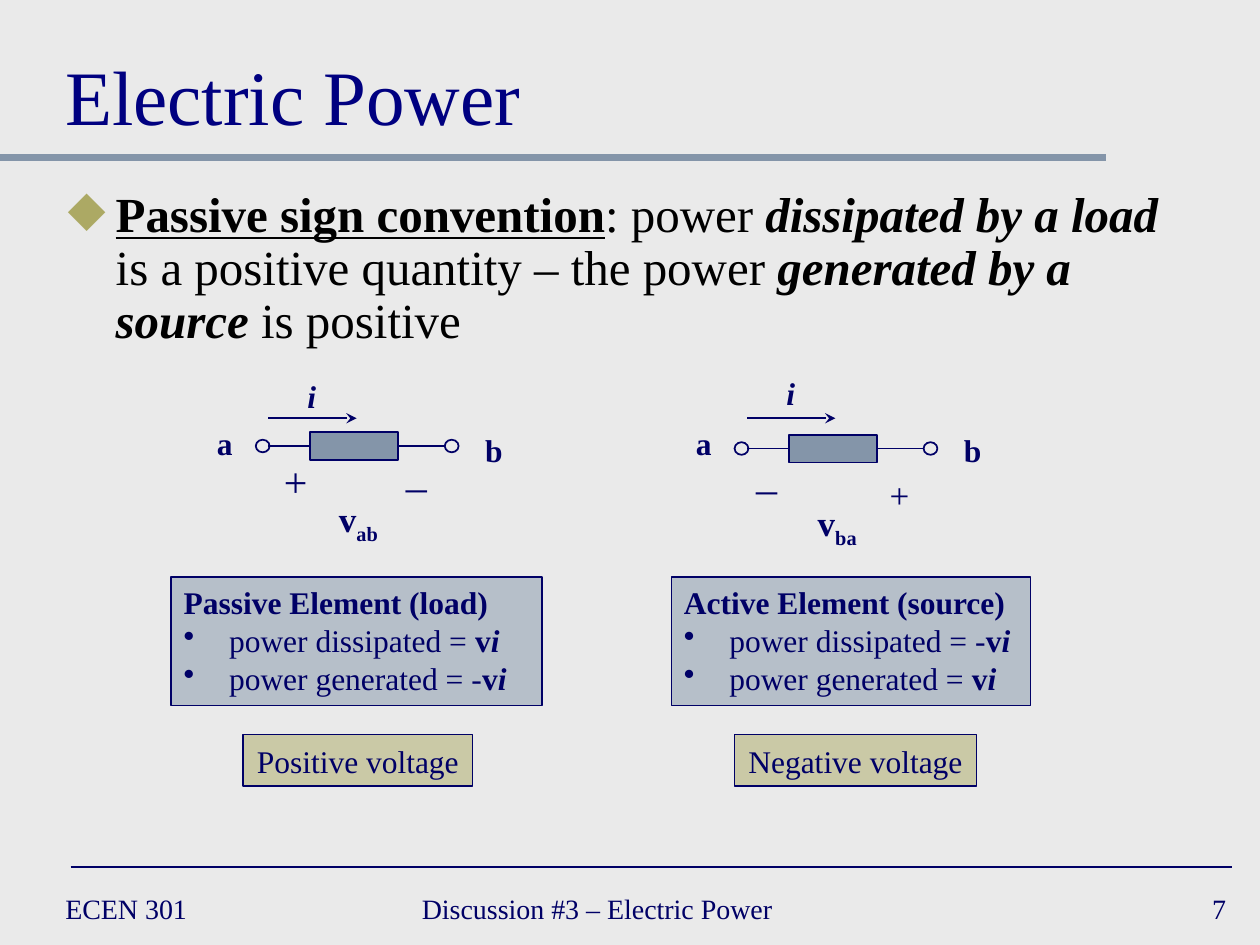
from pptx import Presentation
from pptx.dml.color import RGBColor
from pptx.enum.shapes import MSO_CONNECTOR, MSO_SHAPE
from pptx.enum.text import MSO_ANCHOR, PP_ALIGN
from pptx.oxml.ns import qn
from pptx.util import Inches, Pt
from lxml.etree import SubElement

PAPER = RGBColor(0xEA, 0xEA, 0xEA)
NAVY = RGBColor(0x00, 0x00, 0x66)
TITLE_BLUE = RGBColor(0x00, 0x00, 0x80)
BLACK = RGBColor(0x00, 0x00, 0x00)
STEEL = RGBColor(0x84, 0x95, 0xA9)
OLIVE = RGBColor(0xAC, 0xA9, 0x64)
FONT = "Times New Roman"
COLUMNS, ROWS = 100, 75
CELL = Inches(0.1)


def cells(*counts):
    """Turn counts of grid columns or rows into lengths."""
    return [round(count * CELL) for count in counts]


def add_runs(paragraph, runs, size, color):
    """Add (text, flags) runs; flags are b, i, u and s for subscript."""
    for text, flags in runs:
        run = paragraph.add_run()
        run.text = text
        font = run.font
        font.name, font.size, font.color.rgb = FONT, Pt(size), color
        font.bold = "b" in flags
        font.italic = "i" in flags
        font.underline = "u" in flags
        if "s" in flags:
            run._r.get_or_add_rPr().set("baseline", "-25000")


def add_bullet(paragraph, character, indent, color=None):
    properties = paragraph._p.get_or_add_pPr()
    properties.set("marL", str(Inches(indent)))
    properties.set("indent", str(-Inches(indent)))
    if color is not None:
        bullet_color = SubElement(properties, qn("a:buClr"))
        SubElement(bullet_color, qn("a:srgbClr")).set("val", str(color))
    SubElement(properties, qn("a:buChar")).set("char", character)


def add_text(shapes, box, runs, size, color=NAVY, align=PP_ALIGN.LEFT,
             anchor=MSO_ANCHOR.TOP, wrap=True):
    shape = shapes.add_textbox(*cells(*box))
    frame = shape.text_frame
    frame.word_wrap = wrap
    frame.vertical_anchor = anchor
    paragraph = frame.paragraphs[0]
    paragraph.alignment = align
    add_runs(paragraph, runs, size, color)
    return shape


def add_label(shapes, box, text, size=18, flags=""):
    return add_text(shapes, box, [(text, flags)], size,
                    align=PP_ALIGN.CENTER, wrap=False)


def add_line(shapes, start, end, color=NAVY, width=1, arrow=False):
    line = shapes.add_connector(MSO_CONNECTOR.STRAIGHT, *cells(*start, *end))
    line.line.color.rgb = color
    line.line.width = Pt(width)
    if arrow:
        SubElement(line.line._get_or_add_ln(), qn("a:tailEnd")).set("type", "stealth")
    SubElement(line._element.spPr, qn("a:effectLst"))


def add_outlined(shapes, kind, box, fill=None, opacity=100):
    shape = shapes.add_shape(kind, *cells(*box))
    shape.shadow.inherit = False
    if fill is None:
        shape.fill.background()
    else:
        shape.fill.solid()
        shape.fill.fore_color.rgb = fill
        if opacity < 100:
            tint = shape._element.spPr.find(".//" + qn("a:srgbClr"))
            SubElement(tint, qn("a:alpha")).set("val", str(opacity * 1000))
    shape.line.color.rgb = NAVY
    shape.line.width = Pt(1)
    return shape


def add_circuit(slide, left, wire, current_top, voltage_top, subscript):
    """Draw a two-terminal element whose left terminal starts at left."""
    shapes = slide.shapes.add_group_shape().shapes
    for terminal, inner, outer in ((0, 1, 4.3), (15, 11.3, 15)):
        add_line(shapes, (left + inner, wire), (left + outer, wire))
        add_outlined(shapes, MSO_SHAPE.OVAL, (left + terminal, wire - 0.5, 1.1, 1))
    add_outlined(shapes, MSO_SHAPE.RECTANGLE, (left + 4.3, wire - 1.1, 7, 2.2), STEEL)
    add_line(shapes, (left + 1, 33.2), (left + 8, 33.2), arrow=True)
    add_label(shapes, (left + 3.1, current_top, 2.7, 4), "i", flags="bi")
    add_label(shapes, (left - 4.1, 33.2, 3.3, 4), "a", flags="b")
    add_label(shapes, (left + 17.2, 33.7, 3.4, 4), "b", flags="b")
    add_text(shapes, (left + 4.8, voltage_top, 6.7, 4.4),
             [("v", "b"), (subscript, "bs")], 20, align=PP_ALIGN.CENTER)
    return shapes


def add_element_box(slide, left, width, heading, dissipated_sign, generated_sign):
    box = add_outlined(slide.shapes, MSO_SHAPE.RECTANGLE,
                       (left, 45.8, width, 10.2), STEEL, 50)
    frame = box.text_frame
    frame.word_wrap = True
    frame.vertical_anchor = MSO_ANCHOR.TOP
    first = frame.paragraphs[0]
    first.alignment = PP_ALIGN.LEFT
    add_runs(first, [(heading, "b")], 18, NAVY)
    for kind, sign in (("dissipated", dissipated_sign), ("generated", generated_sign)):
        paragraph = frame.add_paragraph()
        paragraph.alignment = PP_ALIGN.LEFT
        add_bullet(paragraph, "•", 0.36)
        add_runs(paragraph, [(f"power {kind} = {sign}", ""), ("v", "b"), ("i", "bi")],
                 18, NAVY)


def add_voltage_tag(slide, left, width, text):
    tag = add_outlined(slide.shapes, MSO_SHAPE.RECTANGLE,
                       (left, 58.3, width, 4.1), OLIVE, 50)
    tag.text_frame.word_wrap = False
    paragraph = tag.text_frame.paragraphs[0]
    paragraph.alignment = PP_ALIGN.CENTER
    add_runs(paragraph, [(text, "")], 18, NAVY)


def add_frame(slide):
    """Add the title, the two rules and the footer."""
    shapes = slide.shapes
    add_line(shapes, (0, 12.5), (87.8, 12.5), STEEL, 4)
    add_line(shapes, (5.6, 68.8), (97.8, 68.8))
    add_text(shapes, (4.2, 1.7, 91.7, 10), [("Electric Power", "")], 44,
             TITLE_BLUE, anchor=MSO_ANCHOR.BOTTOM)
    for left, width, text, align in (
            (4.2, 21.7, "ECEN 301", PP_ALIGN.LEFT),
            (32.5, 38.3, "Discussion #3 – Electric Power", PP_ALIGN.LEFT),
            (77.5, 20.8, "7", PP_ALIGN.RIGHT)):
        add_text(shapes, (left, 70, width, 4.2), [(text, "")], 16,
                 align=align, anchor=MSO_ANCHOR.MIDDLE)


def add_convention(slide):
    runs = [("Passive sign convention", "bu"), (": power ", ""),
            ("dissipated by a load", "bi"),
            (" is a positive quantity – the power ", ""),
            ("generated by a source", "bi"), (" is positive", "")]
    body = add_text(slide.shapes, (4.4, 14.6, 91.4, 14.6), runs, 28, BLACK)
    paragraph = body.text_frame.paragraphs[0]
    add_bullet(paragraph, "◆", 0.38, OLIVE)
    paragraph.line_spacing = 0.9


def main():
    presentation = Presentation()
    presentation.slide_width, presentation.slide_height = cells(COLUMNS, ROWS)
    slide = presentation.slides.add_slide(presentation.slide_layouts[6])
    slide.background.fill.solid()
    slide.background.fill.fore_color.rgb = PAPER

    add_frame(slide)
    add_convention(slide)

    load = add_circuit(slide, 20.3, 35.4, 29.4, 39, "ab")
    plus = add_label(load, (21.3, 35.9, 3.9, 5), "+", 24)
    plus.rotation = 270
    add_label(load, (31.2, 34.9, 3.7, 5), "_", 24)

    source = add_circuit(slide, 58.3, 35.6, 29.2, 39.3, "ba")
    add_label(source, (59, 35, 3.7, 5), "_", 24)
    add_label(source, (69.6, 37.1, 3.6, 4.3), "+", 20)

    add_element_box(slide, 53.3, 28.5, "Active Element (source)", "-", "")
    add_element_box(slide, 13.6, 29.4, "Passive Element (load)", "", "-")
    add_voltage_tag(slide, 19.3, 18.2, "Positive voltage")
    add_voltage_tag(slide, 58.3, 19.2, "Negative voltage")
    presentation.save("out.pptx")


if __name__ == "__main__":
    main()
